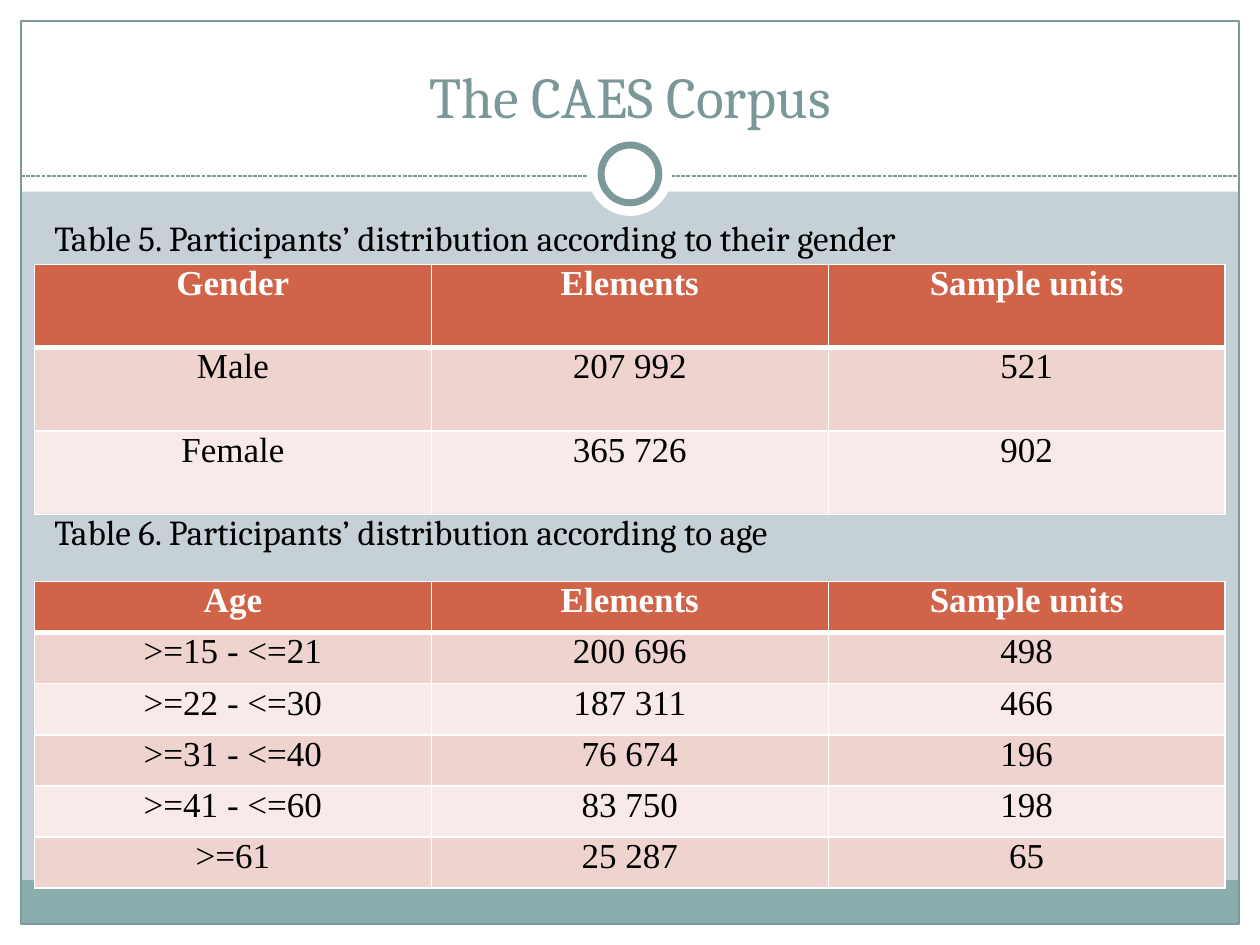
from lxml import etree
from pptx import Presentation
from pptx.dml.color import RGBColor
from pptx.enum.dml import MSO_LINE
from pptx.enum.shapes import MSO_CONNECTOR, MSO_SHAPE
from pptx.enum.text import MSO_ANCHOR, PP_ALIGN
from pptx.oxml.ns import qn
from pptx.util import Pt

RECTANGLE, OVAL = MSO_SHAPE.RECTANGLE, MSO_SHAPE.OVAL
STRAIGHT, DASH = MSO_CONNECTOR.STRAIGHT, MSO_LINE.SQUARE_DOT
LEFT, CENTER = PP_ALIGN.LEFT, PP_ALIGN.CENTER
TOP, BOTTOM = MSO_ANCHOR.TOP, MSO_ANCHOR.BOTTOM

WHITE = RGBColor(0xFF, 0xFF, 0xFF)
BLACK = RGBColor(0x00, 0x00, 0x00)
BACKDROP = RGBColor(0xC5, 0xD1, 0xD7)
FOOTER = RGBColor(0x8C, 0xAD, 0xAE)
FRAME = RGBColor(0x7C, 0x99, 0x9A)
TITLE = RGBColor(0x7B, 0x98, 0x99)
HEADER = RGBColor(0xD1, 0x63, 0x49)
BANDS = (RGBColor(0xEE, 0xD3, 0xCF), RGBColor(0xF7, 0xEA, 0xE9))

WIDTH, HEIGHT, MARGIN = 720, 540, 12


class PageBuilder:
    heading_font = "Cambria"
    table_font = "Times New Roman"
    text_size = 20

    def __init__(self, page):
        self.page = page

    def shape(self, kind, box, fill=None, line=None, weight=0.75):
        shape = self.page.shapes.add_shape(kind, *map(Pt, box))
        shape.shadow.inherit = False
        if fill is None:
            shape.fill.background()
        else:
            shape.fill.solid()
            shape.fill.fore_color.rgb = fill
        if line is None:
            shape.line.fill.background()
        else:
            shape.line.color.rgb = line
            shape.line.width = Pt(weight)

    def dashed_line(self, start, end, color):
        line = self.page.shapes.add_connector(STRAIGHT, *map(Pt, start + end))
        line.line.color.rgb = color
        line.line.width = Pt(0.75)
        line.line.dash_style = DASH
        etree.SubElement(line._element.spPr, qn("a:effectLst"))

    def add_span(self, frame, text, align, color, **font):
        para = frame.paragraphs[0]
        para.alignment = align
        span = para.add_run()
        span.text = text
        span.font.color.rgb = color
        for name, value in font.items():
            setattr(span.font, name, value)

    def text(self, box, text, size, color, align=LEFT, anchor=TOP):
        frame = self.page.shapes.add_textbox(*map(Pt, box)).text_frame
        frame.word_wrap = True
        frame.vertical_anchor = anchor
        self.add_span(frame, text, align, color, size=Pt(size), name=self.heading_font)

    def borders(self, cell, widths):
        properties = cell._tc.get_or_add_tcPr()
        for position, (side, width) in enumerate(widths.items()):
            line = etree.Element(qn(f"a:{side}"), w=str(Pt(width)))
            fill = etree.SubElement(line, qn("a:solidFill"))
            etree.SubElement(fill, qn("a:srgbClr"), val=str(WHITE))
            properties.insert(position, line)

    def table(self, left, top, column_width, row_height, rows):
        columns = len(rows[0])
        table = self.page.shapes.add_table(
            len(rows), columns, Pt(left), Pt(top),
            Pt(column_width * columns), Pt(row_height * len(rows))).table
        for column in table.columns:
            column.width = Pt(column_width)
        for index, values in enumerate(rows):
            table.rows[index].height = Pt(row_height)
            header = index == 0
            for column, value in enumerate(values):
                cell = table.cell(index, column)
                cell.margin_left = cell.margin_right = Pt(5)
                cell.margin_top = cell.margin_bottom = 0
                cell.fill.solid()
                cell.fill.fore_color.rgb = HEADER if header else BANDS[(index - 1) % 2]
                self.add_span(cell.text_frame, value, CENTER, WHITE if header else BLACK,
                              size=Pt(self.text_size), name=self.table_font, bold=header)
                self.borders(cell, {"lnL": 1, "lnR": 1,
                                    "lnT": 3 if index == 1 else 1,
                                    "lnB": 3 if header else 1})


def main():
    deck = Presentation()
    deck.slide_width, deck.slide_height = Pt(WIDTH), Pt(HEIGHT)
    page = deck.slides.add_slide(deck.slide_layouts[6])
    page.background.fill.solid()
    page.background.fill.fore_color.rgb = BACKDROP
    builder = PageBuilder(page)

    # White margins, footer band and frame
    inner_width = WIDTH - 2 * MARGIN
    for box in ((0, HEIGHT - MARGIN, WIDTH, MARGIN), (0, 0, WIDTH, 109.5),
                (0, 0, MARGIN, HEIGHT), (WIDTH - MARGIN, 0, MARGIN, HEIGHT)):
        builder.shape(RECTANGLE, box, WHITE)
    builder.shape(RECTANGLE, (MARGIN, 503, inner_width, 25), FOOTER)
    builder.shape(RECTANGLE, (MARGIN, MARGIN, inner_width, HEIGHT - 2 * MARGIN), line=FRAME)

    # Dashed divider with the ring on it
    builder.dashed_line((MARGIN, 100.6), (WIDTH - MARGIN, 100.6), FRAME)
    for diameter, line in ((48, None), (33, FRAME)):
        corner = (WIDTH / 2 - diameter / 2, 99.4 - diameter / 2)
        builder.shape(OVAL, corner + (diameter, diameter), WHITE, line, 4)

    # Title and table captions
    builder.text((24, 18, 672, 60), "The CAES Corpus", 33, TITLE, CENTER, BOTTOM)
    captions = ((120, "Table 5. Participants’ distribution according to their gender"),
                (288, "Table 6. Participants’ distribution according to age"))
    for top, caption in captions:
        builder.text((24, top, 670, 32), caption, builder.text_size, BLACK)

    # Tables
    measures = ("Elements", "Sample units")
    builder.table(19.7, 151, 226.8, 47.7, (
        ("Gender",) + measures,
        ("Male", "207 992", "521"),
        ("Female", "365 726", "902")))
    builder.table(19.7, 332.3, 226.8, 29.2, (
        ("Age",) + measures,
        (">=15 - <=21", "200 696", "498"),
        (">=22 - <=30", "187 311", "466"),
        (">=31 - <=40", "76 674", "196"),
        (">=41 - <=60", "83 750", "198"),
        (">=61", "25 287", "65")))

    deck.save("out.pptx")


if __name__ == "__main__":
    main()
